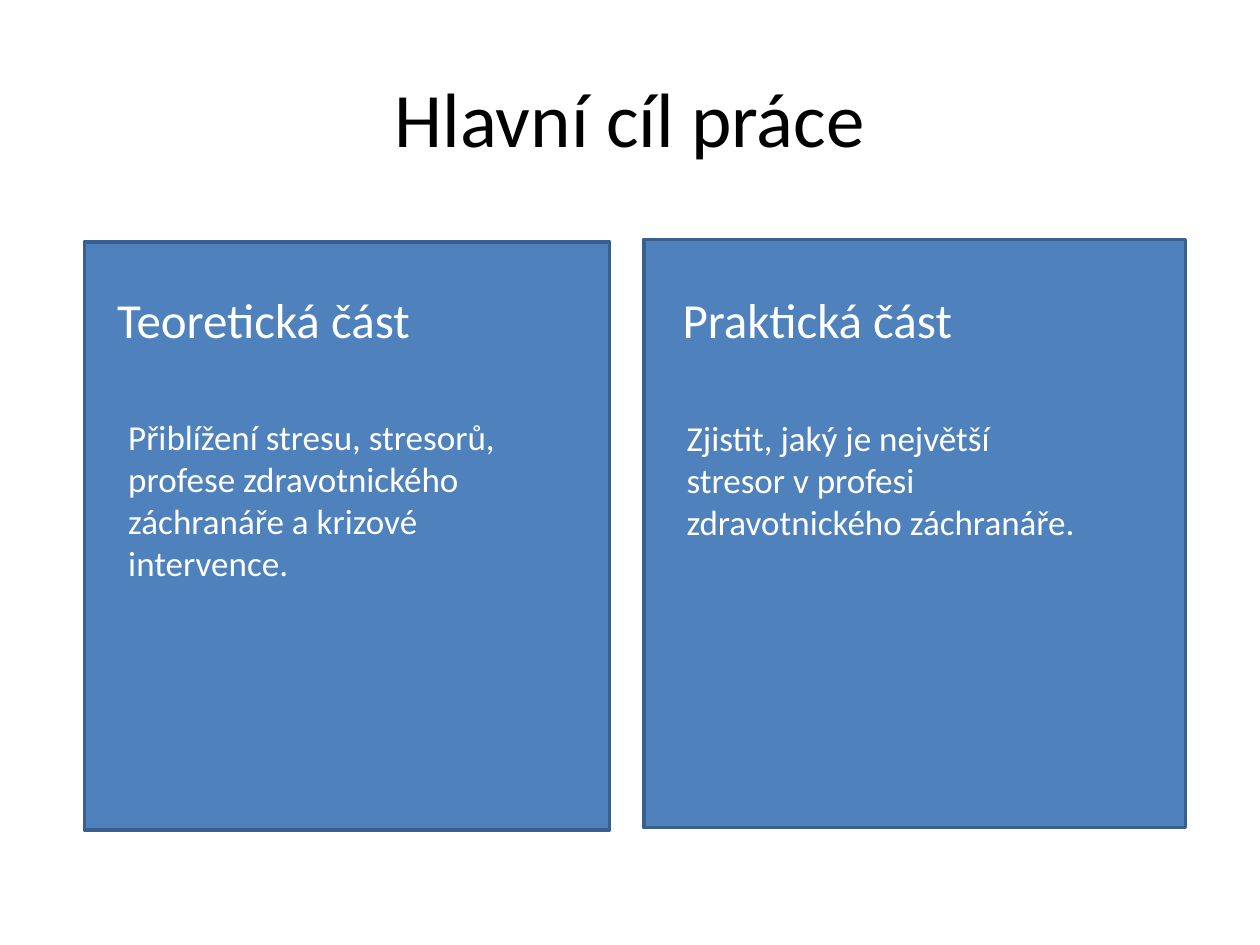
from dataclasses import dataclass

from pptx import Presentation
from pptx.dml.color import RGBColor
from pptx.enum.shapes import MSO_SHAPE
from pptx.enum.text import MSO_ANCHOR, PP_ALIGN
from pptx.util import Pt

RECT = MSO_SHAPE.RECTANGLE
TOP, MIDDLE = MSO_ANCHOR.TOP, MSO_ANCHOR.MIDDLE
LEFT, CENTER = PP_ALIGN.LEFT, PP_ALIGN.CENTER


@dataclass(frozen=True)
class Theme:
    font: str = "Calibri"
    dark: str = "000000"
    light: str = "FFFFFF"
    fill: str = "4F81BD"
    edge: str = "3A5F8C"
    title: int = 44
    head: int = 28
    body: int = 20


THEME = Theme()


def place(shape, box):
    shape.left, shape.top, shape.width, shape.height = map(Pt, box)


def write(shape, text, size, color, align=LEFT, anchor=TOP):
    frame = shape.text_frame
    frame.word_wrap = True
    frame.vertical_anchor = anchor
    para = frame.paragraphs[0]
    para.alignment = align
    run = para.add_run()
    run.text = text
    run.font.name = THEME.font
    run.font.size = Pt(size)
    run.font.color.rgb = RGBColor.from_string(color)


def add_title(slide, box, text):
    title = slide.shapes.title
    place(title, box)
    write(title, text, THEME.title, THEME.dark, CENTER, MIDDLE)


def add_panel(slide, box, head, body):
    """Draw a filled panel; head and body are (dx, dy, width, height, text)."""
    x, y, width, height = box
    # Background
    panel = slide.shapes.add_shape(RECT, Pt(x), Pt(y), Pt(width), Pt(height))
    panel.shadow.inherit = False
    panel.fill.solid()
    panel.fill.fore_color.rgb = RGBColor.from_string(THEME.fill)
    panel.line.color.rgb = RGBColor.from_string(THEME.edge)
    panel.line.width = Pt(2)
    # Heading and text
    for part, size in ((head, THEME.head), (body, THEME.body)):
        dx, dy, wide, high, text = part
        label = slide.shapes.add_textbox(
            Pt(x + dx), Pt(y + dy), Pt(wide), Pt(high))
        write(label, text, size, THEME.light)


def main():
    deck = Presentation()
    deck.slide_width, deck.slide_height = Pt(720), Pt(540)
    slide = deck.slides.add_slide(deck.slide_layouts[5])

    add_title(slide, (36, 21.6, 648, 90), "Hlavní cíl práce")

    # Theory on the left, practice on the right
    add_panel(
        slide, (48.2, 138.2, 300.2, 336.2),
        (11.6, 23.8, 252, 41, "Teoretická část"),
        (18, 95.8, 246.2, 104.4,
         "Přiblížení stresu, stresorů, profese zdravotnického "
         "záchranáře a krizové intervence."))
    add_panel(
        slide, (367.9, 136.8, 309.6, 336.2),
        (15.1, 25.2, 252, 41, "Praktická část"),
        (17.3, 97.9, 241.2, 101.5,
         "Zjistit, jaký je největší stresor v profesi "
         "zdravotnického záchranáře."))

    deck.save("out.pptx")


if __name__ == "__main__":
    main()
